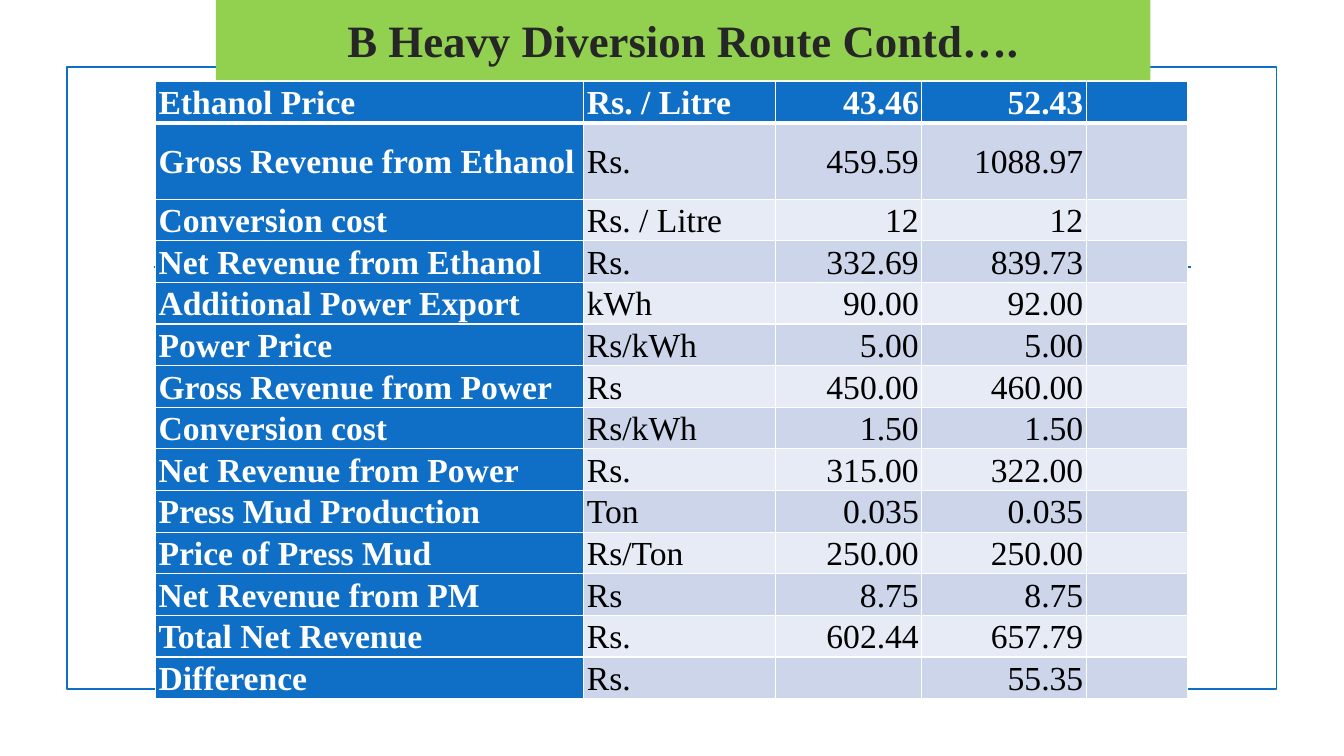
from lxml.etree import SubElement
from pptx import Presentation
from pptx.dml.color import RGBColor
from pptx.enum.shapes import MSO_CONNECTOR, MSO_SHAPE
from pptx.enum.text import MSO_ANCHOR, PP_ALIGN
from pptx.oxml.ns import qn
from pptx.util import Pt

COLORS = {
    "blue": "0F6FC6",
    "green": "92D050",
    "title": "262626",
    "band_dark": "CCD5EA",
    "band_light": "E7EBF5",
    "white": "FFFFFF",
    "black": "000000",
}
FONT = "Times New Roman"
COLUMN_WIDTHS = [306, 137, 104.5, 117.5, 72]
ROW_HEIGHT, TALL_ROW_HEIGHT = 29.75, 54.5
ROWS = [
    ("Ethanol Price", "Rs. / Litre", "43.46", "52.43", ""),
    ("Gross Revenue from Ethanol", "Rs.", "459.59", "1088.97", ""),
    ("Conversion cost", "Rs. / Litre", "12", "12", ""),
    ("Net Revenue from Ethanol", "Rs.", "332.69", "839.73", ""),
    ("Additional Power Export", "kWh", "90.00", "92.00", ""),
    ("Power Price", "Rs/kWh", "5.00", "5.00", ""),
    ("Gross Revenue from Power", "Rs", "450.00", "460.00", ""),
    ("Conversion cost", "Rs/kWh", "1.50", "1.50", ""),
    ("Net Revenue from Power", "Rs.", "315.00", "322.00", ""),
    ("Press Mud Production", "Ton", "0.035", "0.035", ""),
    ("Price of Press Mud", "Rs/Ton", "250.00", "250.00", ""),
    ("Net Revenue from PM", "Rs", "8.75", "8.75", ""),
    ("Total Net Revenue", "Rs.", "602.44", "657.79", ""),
    ("Difference", "Rs.", "", "55.35", ""),
]


def color(name):
    return RGBColor.from_string(COLORS[name])


def add_cell_border(cell, side, width):
    line = SubElement(cell._tc.get_or_add_tcPr(), qn(f"a:ln{side}"), w=str(Pt(width)))
    fill = SubElement(line, qn("a:solidFill"))
    SubElement(fill, qn("a:srgbClr"), val=COLORS["white"])


presentation = Presentation()
presentation.slide_width, presentation.slide_height = Pt(960), Pt(540)
slide = presentation.slides.add_slide(presentation.slide_layouts[5])

# Frame and rule behind the content
frame = slide.shapes.add_shape(MSO_SHAPE.RECTANGLE, Pt(47.75), Pt(48), Pt(864), Pt(444))
frame.shadow.inherit = False
frame.fill.background()
frame.line.color.rgb = color("blue")
frame.line.width = Pt(1.25)

rule = slide.shapes.add_connector(
    MSO_CONNECTOR.STRAIGHT, Pt(110), Pt(190.8), Pt(850.5), Pt(190.8))
rule.line.color.rgb = color("blue")
rule.line.width = Pt(1.25)
SubElement(rule.element.spPr, qn("a:effectLst"))

# Title banner, stacked above the frame
title = slide.shapes.title
rule.element.addnext(title.element)
title.left, title.top, title.width, title.height = Pt(154.25), Pt(0), Pt(667.5), Pt(57.25)
title.fill.solid()
title.fill.fore_color.rgb = color("green")
title.text_frame.text = "B Heavy Diversion Route Contd…."
title.text_frame.vertical_anchor = MSO_ANCHOR.MIDDLE
paragraph = title.text_frame.paragraphs[0]
paragraph.alignment = PP_ALIGN.CENTER
paragraph.font.name = FONT
paragraph.font.size = Pt(32)
paragraph.font.bold = True
paragraph.font.color.rgb = color("title")

# Revenue table
row_heights = [TALL_ROW_HEIGHT if index == 1 else ROW_HEIGHT for index in range(len(ROWS))]
table = slide.shapes.add_table(
    len(ROWS), len(COLUMN_WIDTHS), Pt(111), Pt(58),
    Pt(sum(COLUMN_WIDTHS)), Pt(sum(row_heights))).table
table.first_col = True
for column, width in zip(table.columns, COLUMN_WIDTHS):
    column.width = Pt(width)
for row, height in zip(table.rows, row_heights):
    row.height = Pt(height)

for row_index, values in enumerate(ROWS):
    band = "band_dark" if row_index % 2 else "band_light"
    for column_index, value in enumerate(values):
        cell = table.cell(row_index, column_index)
        is_heading = row_index == 0 or column_index == 0
        for side in "LRTB":
            below_header = (row_index, side) in [(0, "B"), (1, "T")]
            add_cell_border(cell, side, 3 if below_header else 1)
        cell.fill.solid()
        cell.fill.fore_color.rgb = color("blue" if is_heading else band)
        cell.margin_left = cell.margin_right = Pt(2.25)
        cell.margin_top = cell.margin_bottom = Pt(0)
        cell.vertical_anchor = MSO_ANCHOR.MIDDLE
        cell.text = value
        paragraph = cell.text_frame.paragraphs[0]
        paragraph.alignment = PP_ALIGN.RIGHT if column_index >= 2 else PP_ALIGN.LEFT
        paragraph.line_spacing = 1.07
        paragraph.font.name = FONT
        paragraph.font.size = Pt(24)
        paragraph.font.bold = is_heading
        paragraph.font.color.rgb = color("white" if is_heading else "black")

presentation.save("out.pptx")
